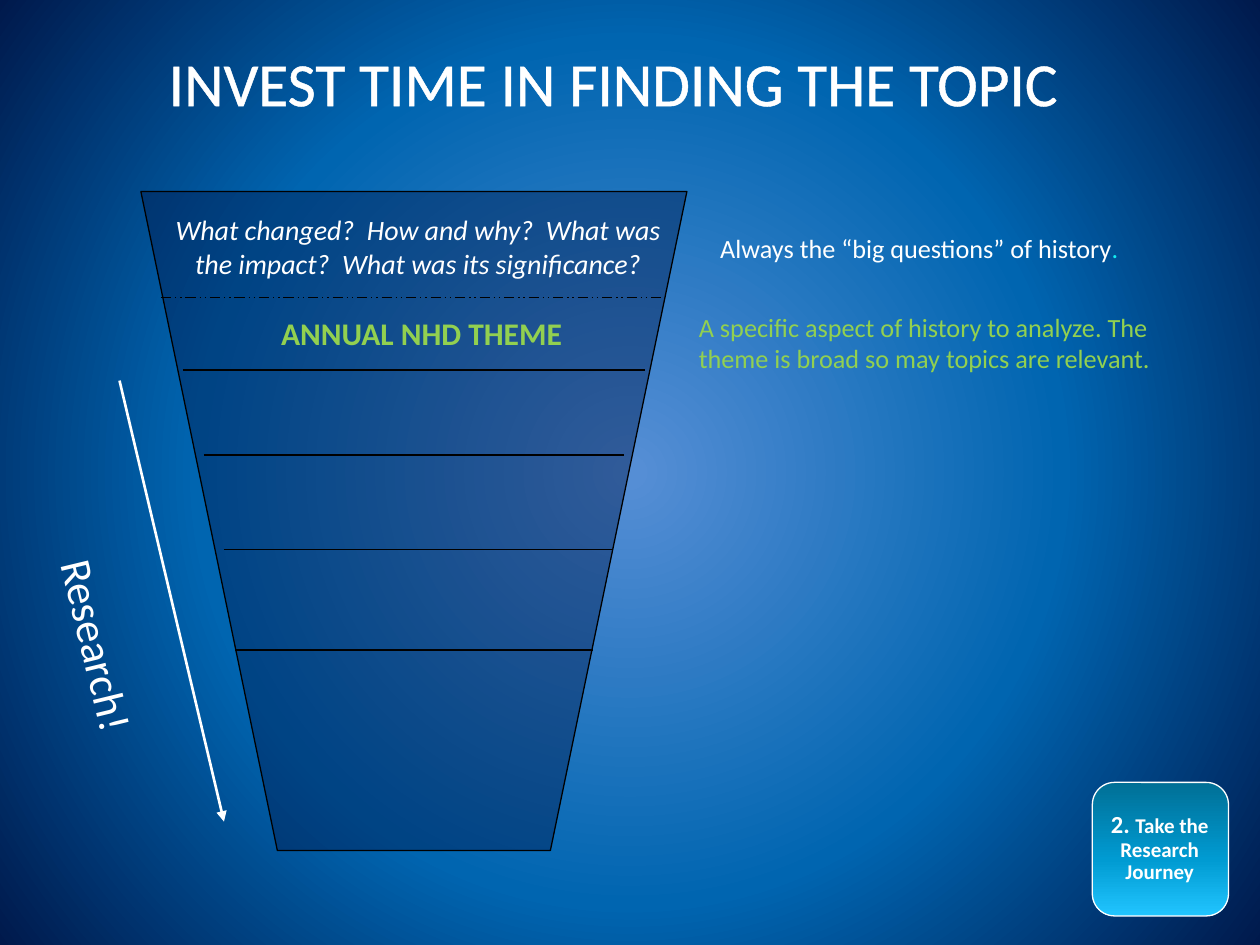
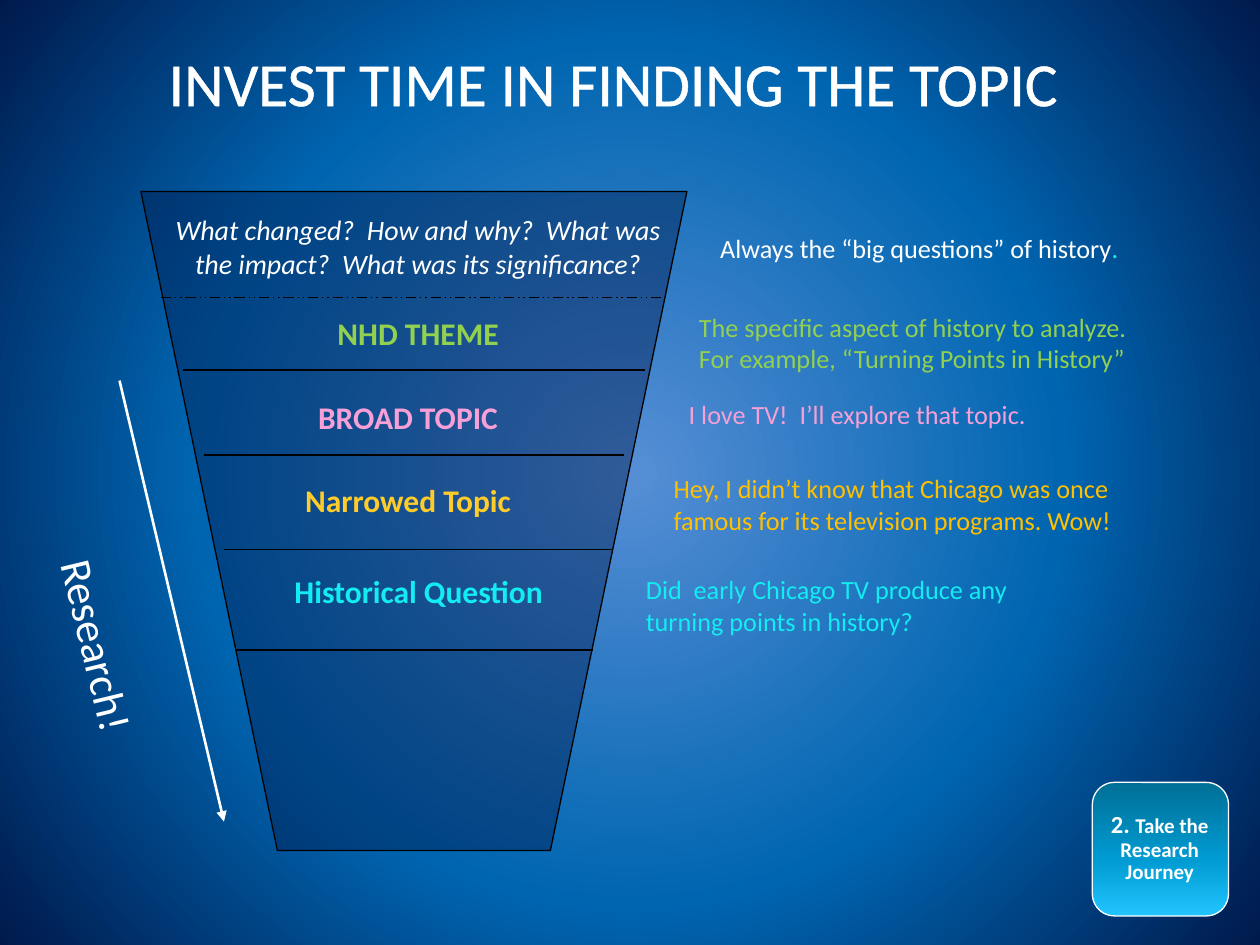
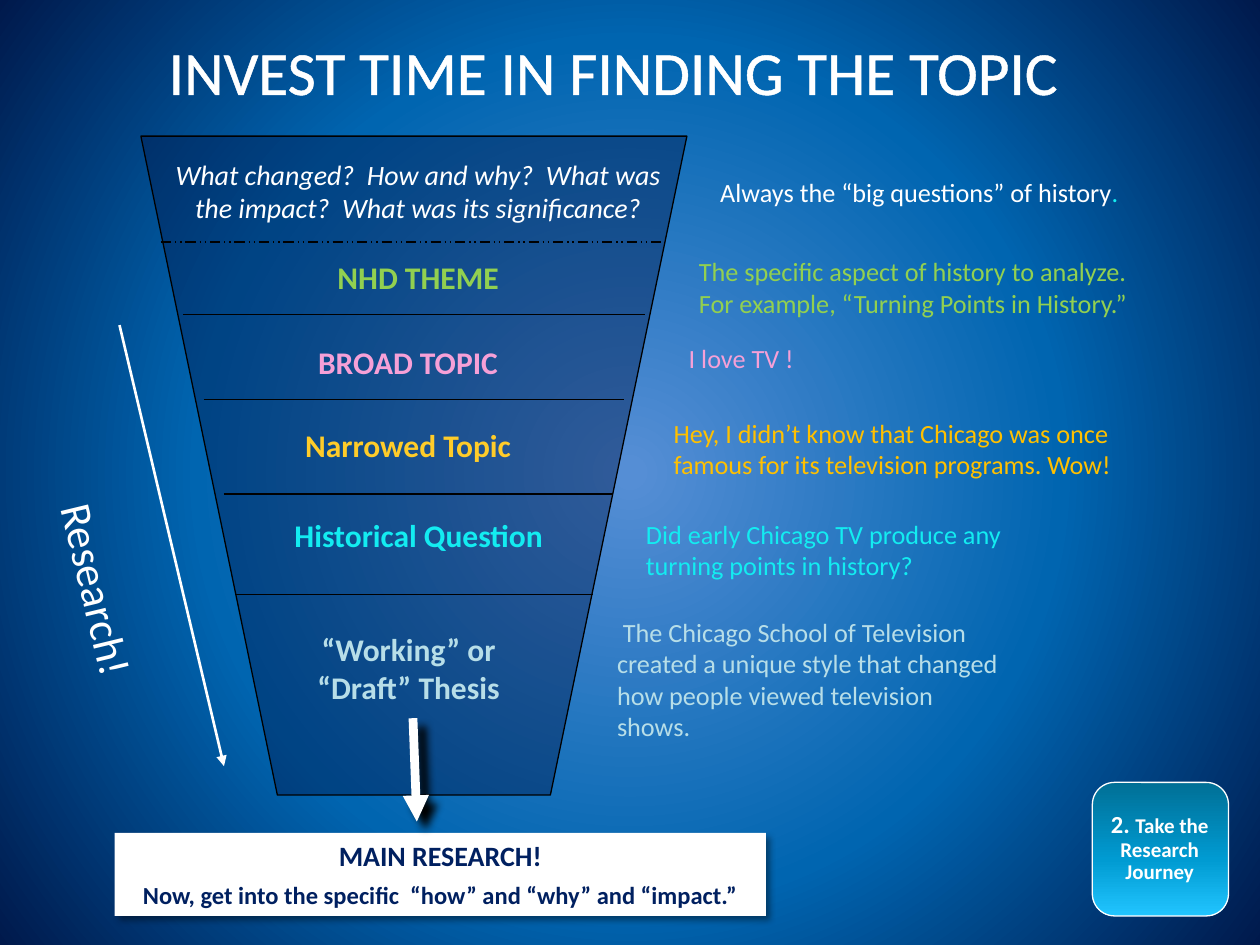
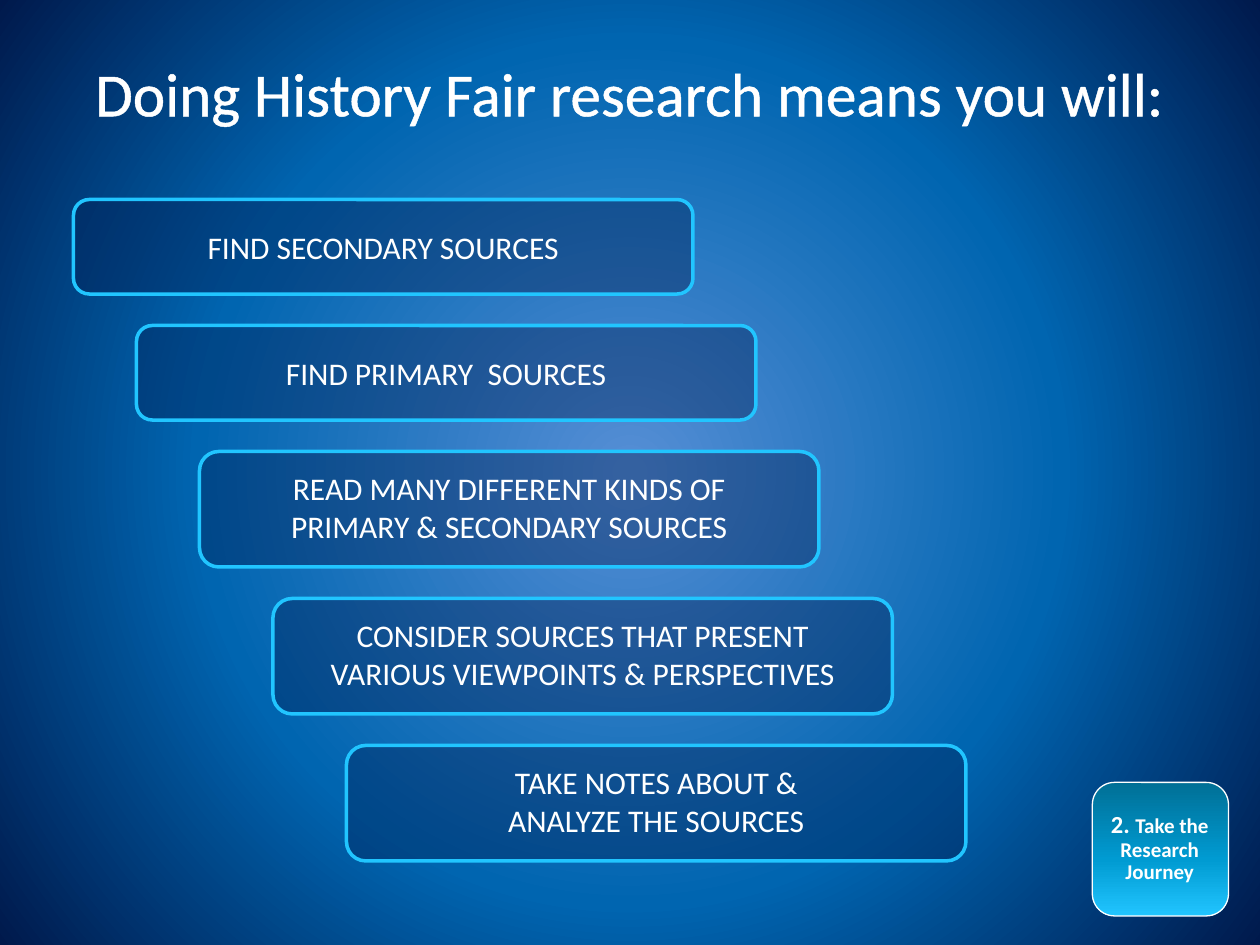
from dataclasses import dataclass

from lxml import etree
from pptx import Presentation
from pptx.dml.color import RGBColor
from pptx.enum.dml import MSO_LINE
from pptx.enum.shapes import MSO_CONNECTOR, MSO_SHAPE
from pptx.enum.text import MSO_ANCHOR, MSO_AUTO_SIZE, PP_ALIGN
from pptx.oxml.ns import qn
from pptx.util import Pt

STRAIGHT = MSO_CONNECTOR.STRAIGHT
RECTANGLE, ROUNDED = MSO_SHAPE.RECTANGLE, MSO_SHAPE.ROUNDED_RECTANGLE
LEFT, CENTER = PP_ALIGN.LEFT, PP_ALIGN.CENTER
TOP, MIDDLE = MSO_ANCHOR.TOP, MSO_ANCHOR.MIDDLE
FIT_SHAPE, NO_FIT = MSO_AUTO_SIZE.SHAPE_TO_FIT_TEXT, MSO_AUTO_SIZE.NONE
DASH_DOT_DOT = MSO_LINE.DASH_DOT_DOT
TITLE_ONLY = 5


@dataclass(frozen=True)
class Theme:
    font: str = "Calibri"
    white: str = "FFFFFF"
    black: str = "000000"
    navy: str = "00194C"
    ink: str = "002060"
    sky: str = "21C5FF"
    green: str = "92D050"
    pink: str = "F6A0D7"
    amber: str = "FFCC29"
    gold: str = "FFC000"
    cyan: str = "13ECF1"
    pale: str = "B7DEE8"
    page_stops: tuple = ((1, "558ED5"), (55, "0065B0"), (100, "00194C"))
    badge_stops: tuple = ((0, "006F96"), (58, "009BD2"), (100, "21C5FF"))
    title_size: float = 35
    research_size: float = 25
    label_size: float = 18
    question_size: float = 16
    comment_size: float = 15
    badge_size: float = 12
    lead_size: float = 14


@dataclass(frozen=True)
class Box:
    left: float
    top: float
    width: float
    height: float

    def inner(self, left, top, width, height):
        """Box whose place is measured from this box's corner."""
        return Box(self.left + left, self.top + top, width, height)

    def lengths(self):
        return [Pt(value) for value in (self.left, self.top, self.width, self.height)]


@dataclass(frozen=True)
class Span:
    text: str
    size: float
    color: str
    bold: bool = False
    italic: bool = False


THEME = Theme()
BADGE = Box(624.2, 447.1, 77.8, 76.3)
FUNNEL_TITLE = "INVEST TIME IN FINDING THE TOPIC"

# Funnel dividers: left end, right end, distance from the funnel top
DIVIDERS = ((11.5, 299.5, 60.5), (24, 288, 102), (36, 276, 150.5),
            (47.5, 270, 204.5), (54, 258.5, 262))

# Funnel stages: label colour, label box, comment colour, comment box
STAGES = (
    (THEME.green, (29.5, 66.2, 257.8, 28.8), THEME.green, (311.8, 64.8, 264, 44)),
    (THEME.pink, (23.8, 114.5, 257.8, 28.8), THEME.pink, (306, 114.5, 225, 25.2)),
    (THEME.amber, (23.8, 162, 257.8, 28.8), THEME.gold, (297.4, 157, 288, 44)),
    (THEME.cyan, (77.8, 213.8, 162, 28.8), THEME.cyan, (281.5, 214.6, 234, 44)),
    (THEME.pale, (87.1, 278.6, 131.8, 51), THEME.pale, (265, 270.7, 237, 80)),
)

NARROWED = ("Narrowed Topic",
            "Hey, I didn’t know that Chicago was once famous for its television programs. Wow!")

# Funnel slides: title top, funnel top, width of the theme comment, stage texts
FUNNEL_PAGES = (
    (30.2, 109.5, 286, (
        (" ANNUAL NHD THEME",
         "A specific aspect of history to analyze. The theme is broad so may topics are relevant."),
    )),
    (30.2, 109.5, 264, (
        ("NHD THEME",
         "The specific aspect of history to analyze. For example, “Turning Points in History”"),
        ("BROAD TOPIC", "I love TV!  I’ll explore that topic."),
        NARROWED,
        ("Historical Question", "Did  early Chicago TV produce any turning points in history?"),
    )),
    (23.8, 77.8, 274, (
        ("NHD THEME",
         "The specific aspect of history to analyze. For example, “Turning Points in History.”"),
        ("BROAD TOPIC", "I love TV !"),
        NARROWED,
        ("Historical Question", "Did early Chicago TV produce any turning points in history?"),
        ("“Working” or “Draft” Thesis",
         " The Chicago School of Television created a unique style that changed "
         "how people viewed television shows."),
    )),
)

# Research steps: text, box height, text height, text margin at the sides
STEPS = (
    ("FIND SECONDARY SOURCES", 54, 28.8, 12),
    ("FIND PRIMARY  SOURCES", 54, 28.8, 12),
    ("READ MANY DIFFERENT KINDS OF PRIMARY & SECONDARY SOURCES", 66, 53, 12),
    ("CONSIDER SOURCES THAT PRESENT VARIOUS VIEWPOINTS & PERSPECTIVES", 66, 53, 12),
    ("TAKE NOTES ABOUT & ANALYZE THE SOURCES", 66, 53, 60),
)


# --- XML helpers ---

def add_element(parent, tag, **attributes):
    values = {name: str(value) for name, value in attributes.items()}
    return etree.SubElement(parent, qn(tag), values)


def set_gradient(properties, fill, stops, angle=None):
    """Linear gradient at an angle, or a circular one from the centre."""
    fill.solid()
    gradient = etree.Element(qn("a:gradFill"), rotWithShape="1")
    stop_list = add_element(gradient, "a:gsLst")
    for position, color in stops:
        stop = add_element(stop_list, "a:gs", pos=position * 1000)
        add_element(stop, "a:srgbClr", val=color)
    if angle is None:
        circle = add_element(gradient, "a:path", path="circle")
        add_element(circle, "a:fillToRect", l=50000, t=50000, r=50000, b=50000)
    else:
        add_element(gradient, "a:lin", ang=angle * 60000, scaled=0)
    properties.replace(properties.find(qn("a:solidFill")), gradient)


def set_shadow(properties, alpha, blur, distance, angle):
    for old in properties.findall(qn("a:effectLst")):
        properties.remove(old)
    effects = add_element(properties, "a:effectLst")
    shadow = add_element(effects, "a:outerShdw", blurRad=Pt(blur), dist=Pt(distance),
                         dir=angle * 60000, algn="ctr", rotWithShape=0)
    color = add_element(shadow, "a:srgbClr", val=THEME.black)
    add_element(color, "a:alpha", val=alpha * 1000)


# --- Basic parts ---

def paint(shape, color, alpha=None):
    shape.shadow.inherit = False
    shape.fill.solid()
    shape.fill.fore_color.rgb = RGBColor.from_string(color)
    if alpha is not None:
        color_node = shape._element.spPr.find(qn("a:solidFill"))[0]
        add_element(color_node, "a:alpha", val=alpha * 1000)


def outline(line, color, width):
    line.color.rgb = RGBColor.from_string(color)
    line.width = Pt(width)


def add_line(page, start, end, color, width, arrow=False, dash=None):
    connector = page.shapes.add_connector(STRAIGHT, *(Pt(value) for value in start + end))
    outline(connector.line, color, width)
    if dash is not None:
        connector.line.dash_style = dash
    properties = connector._element.spPr
    if arrow:
        add_element(properties.find(qn("a:ln")), "a:tailEnd", type="triangle")
    add_element(properties, "a:effectLst")
    return connector


def write(frame, paragraphs, align=LEFT, anchor=TOP, fit=FIT_SHAPE, line_spacing=None, gap=0):
    """Fill a text frame with paragraphs, each a list of spans."""
    frame.word_wrap = True
    frame.auto_size = fit
    frame.vertical_anchor = anchor
    for index, spans in enumerate(paragraphs):
        para = frame.add_paragraph() if index else frame.paragraphs[0]
        para.alignment = align
        if line_spacing:
            para.line_spacing = line_spacing
        if index:
            para.space_before = Pt(gap)
        for span in spans:
            run = para.add_run()
            run.text = span.text
            run.font.name = THEME.font
            run.font.size = Pt(span.size)
            run.font.bold = span.bold
            run.font.italic = span.italic
            run.font.color.rgb = RGBColor.from_string(span.color)


def add_text(page, box, *spans, **options):
    shape = page.shapes.add_textbox(*box.lengths())
    write(shape.text_frame, [spans], **options)
    return shape


# --- Parts shared by all slides ---

def add_title(page, box, text):
    title = page.shapes.title
    title.left, title.top, title.width, title.height = box.lengths()
    write(title.text_frame, [[Span(text, THEME.title_size, THEME.white)]],
          align=CENTER, line_spacing=0.8)
    # Letters are thickened by a white outline
    run_properties = title.text_frame.paragraphs[0].runs[0].font._element
    edge = etree.Element(qn("a:ln"), w=str(Pt(1)))
    add_element(add_element(edge, "a:solidFill"), "a:srgbClr", val=THEME.white)
    run_properties.insert(0, edge)


def add_badge(page, box):
    tile = page.shapes.add_shape(ROUNDED, *box.lengths())
    tile.shadow.inherit = False
    set_gradient(tile._element.spPr, tile.fill, THEME.badge_stops, angle=90)
    outline(tile.line, THEME.white, 0.75)
    caption = add_text(page, box.inner(0, 2.9, 77, 69.8),
                       Span("2. ", THEME.lead_size, THEME.white, bold=True),
                       Span("Take the Research Journey", THEME.badge_size, THEME.white, bold=True),
                       align=CENTER, anchor=MIDDLE, fit=NO_FIT, line_spacing=0.9)
    frame = caption.text_frame
    frame.margin_left = frame.margin_right = frame.margin_top = frame.margin_bottom = Pt(6)


def add_page(deck, title_box, title):
    page = deck.slides.add_slide(deck.slide_layouts[TITLE_ONLY])
    add_title(page, title_box, title)
    add_badge(page, BADGE)
    return page


# --- Funnel slides ---

def add_funnel(page, box):
    right, bottom = box.left + box.width, box.top + box.height
    corners = ((box.left + box.width / 4, bottom), (right - box.width / 4, bottom),
               (right, box.top))
    builder = page.shapes.build_freeform(Pt(box.left), Pt(box.top))
    builder.add_line_segments([(Pt(x), Pt(y)) for x, y in corners], close=True)
    funnel = builder.convert_to_shape()
    paint(funnel, THEME.navy, alpha=43)
    outline(funnel.line, THEME.black, 0.75)
    for index, (start, end, offset) in enumerate(DIVIDERS):
        level = box.top + offset
        add_line(page, (box.left + start, level), (box.left + end, level), THEME.black, 0.75,
                 dash=None if index else DASH_DOT_DOT)


def add_big_questions(page, box):
    question = "What changed?  How and why?  What was the impact?  What was its significance?"
    add_text(page, box.inner(11.5, 8.6, 293.8, 46),
             Span(question, THEME.question_size, THEME.white, italic=True), align=CENTER)
    add_text(page, box.inner(324, 19.4, 252, 25.2),
             Span("Always the “big questions” of history", THEME.comment_size, THEME.white),
             Span(".", THEME.comment_size, THEME.cyan))


def add_research_arrow(page, box):
    add_line(page, (box.left - 12.2, box.top + 108), (box.left + 47.5, box.top + 360),
             THEME.white, 1.5, arrow=True)
    label = add_text(page, box.inner(-84.2, 243.4, 120.2, 37.4),
                     Span("Research!", THEME.research_size, THEME.white))
    label.rotation = 76.4


def add_stages(page, box, texts, theme_width):
    for index, ((label, comment), stage) in enumerate(zip(texts, STAGES)):
        label_color, label_place, comment_color, (left, top, width, height) = stage
        add_text(page, box.inner(*label_place),
                 Span(label, THEME.label_size, label_color, bold=True), align=CENTER)
        add_text(page, box.inner(left, top, width if index else theme_width, height),
                 Span(comment, THEME.comment_size, comment_color))


def add_main_research(page, box):
    panel = page.shapes.add_shape(RECTANGLE, *box.inner(-15, 398.1, 372.2, 47.5).lengths())
    paint(panel, THEME.white)
    panel.line.fill.background()
    set_shadow(panel._element.spPr, 40, 4, 3, 45)
    write(panel.text_frame, [
        [Span("MAIN RESEARCH!", THEME.question_size, THEME.ink, bold=True)],
        [Span("Now, get into the specific  “how” and “why” and “impact.”",
              THEME.lead_size, THEME.ink, bold=True)],
    ], align=CENTER, gap=4)
    arrow = add_line(page, (box.left + 155.5, box.top + 332.6),
                     (box.left + 157.7, box.top + 391.7), THEME.white, 5, arrow=True)
    set_shadow(arrow._element.spPr, 100, 5, 7, 45)


def add_funnel_page(deck, title_top, funnel_top, theme_width, texts):
    page = add_page(deck, Box(77.8, title_top, 545.8, 41.8), FUNNEL_TITLE)
    box = Box(80.5, funnel_top, 312, 376.5)
    add_funnel(page, box)
    add_big_questions(page, box)
    add_research_arrow(page, box)
    add_stages(page, box, texts, theme_width)
    if len(texts) == len(STAGES):
        add_main_research(page, box)


# --- Steps slide ---

def add_steps(page, start, gap):
    """Boxes run down a diagonal that moves one right for every two down."""
    left, top = start.left, start.top
    for text, height, text_height, margin in STEPS:
        box = Box(left, top, start.width, height)
        panel = page.shapes.add_shape(ROUNDED, *box.lengths())
        paint(panel, THEME.navy, alpha=38)
        outline(panel.line, THEME.sky, 2)
        add_text(page, box.inner(margin, (height - text_height) / 2,
                                 box.width - 2 * margin, text_height),
                 Span(text, THEME.label_size, THEME.white), align=CENTER)
        top += height + gap
        left += (height + gap) / 2


def add_steps_page(deck):
    page = add_page(deck, Box(18, 36, 684, 41), "Doing History Fair research means you will:")
    add_steps(page, Box(42, 114, 354, 54), gap=18)


def main():
    deck = Presentation()
    deck.slide_width, deck.slide_height = Pt(720), Pt(540)
    master = deck.slide_master
    fill = master.background.fill
    fill.solid()
    set_gradient(master._element.find(".//" + qn("p:bgPr")), fill, THEME.page_stops)
    for settings in FUNNEL_PAGES:
        add_funnel_page(deck, *settings)
    add_steps_page(deck)
    deck.save("out.pptx")


if __name__ == "__main__":
    main()
